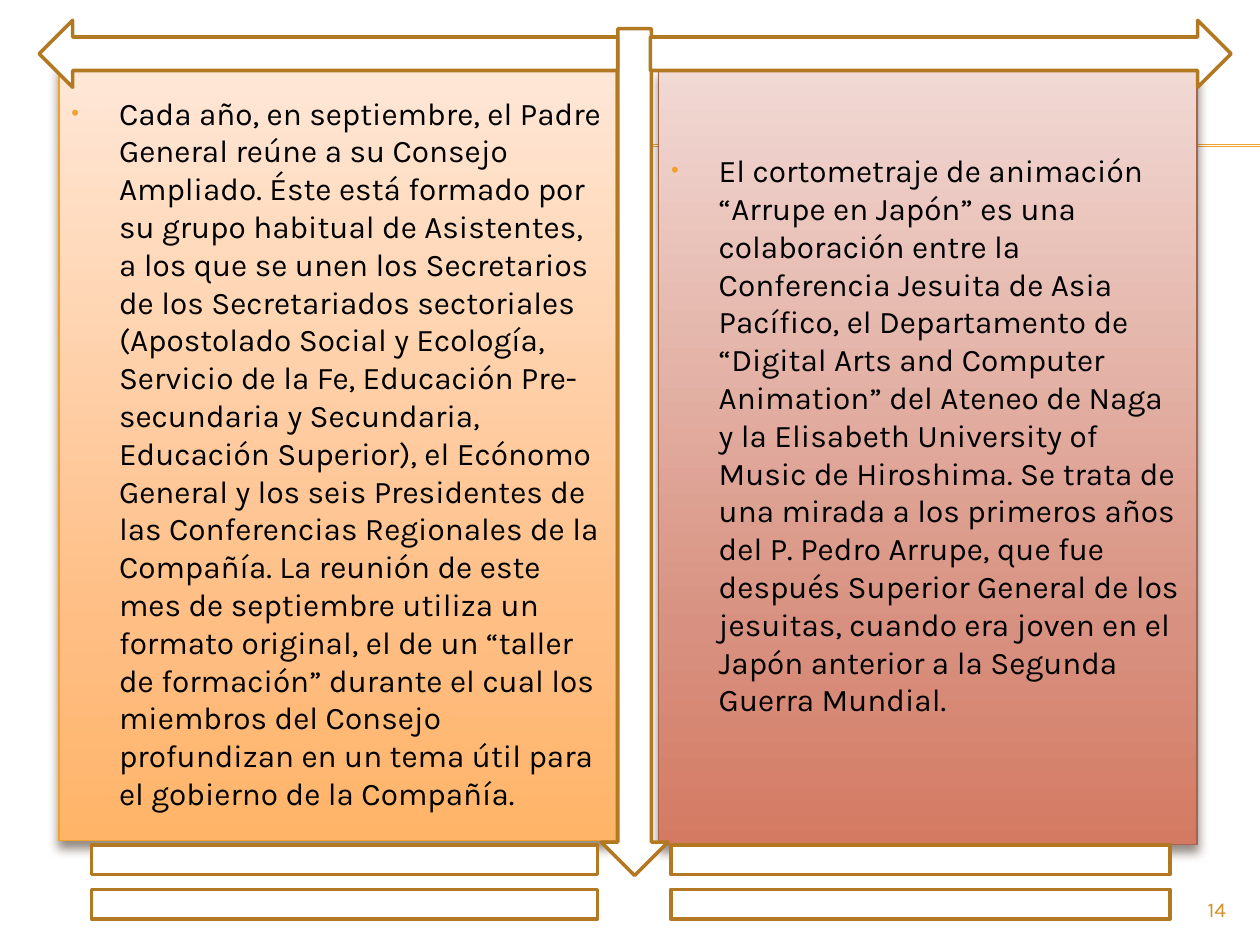
from copy import deepcopy

from lxml.etree import SubElement
from pptx import Presentation
from pptx.dml.color import RGBColor
from pptx.enum.shapes import MSO_CONNECTOR as Connector, MSO_SHAPE as Shape
from pptx.enum.text import MSO_ANCHOR as Anchor, PP_ALIGN as Align
from pptx.oxml.ns import qn
from pptx.util import Cm, Pt

# Content
COUNCIL = (
    "Cada año, en septiembre, el Padre General reúne a su Consejo Ampliado. Éste está "
    "formado por su grupo habitual de Asistentes, a los que se unen los Secretarios de los "
    "Secretariados sectoriales (Apostolado Social y Ecología, Servicio de la Fe, Educación "
    "Pre-secundaria y Secundaria, Educación Superior), el Ecónomo General y los seis "
    "Presidentes de las Conferencias Regionales de la Compañía. La reunión de este mes de "
    "septiembre utiliza un formato original, el de un “taller de formación” durante el cual "
    "los miembros del Consejo profundizan en un tema útil para el gobierno de la Compañía."
)
SHORT_FILM = (
    "El cortometraje de animación “Arrupe en Japón” es una colaboración entre la Conferencia "
    "Jesuita de Asia Pacífico, el Departamento de “Digital Arts and Computer Animation” del "
    "Ateneo de Naga y la Elisabeth University of Music de Hiroshima. Se trata de una mirada a "
    "los primeros años del P. Pedro Arrupe, que fue después Superior General de los jesuitas, "
    "cuando era joven en el Japón anterior a la Segunda Guerra Mundial."
)
PAGE_NUMBER = "14"

# Panels: text, (left, top, width, height) in cm, gradient colours, line, bottom inset
PANELS = [
    (COUNCIL, (1.19, 1.32, 11.23, 15.62), ("FFE7D7", "FFBE84", "FFB468"), "F0A22E", 0.13),
    (SHORT_FILM, (13.28, 1.4, 10.85, 15.62), ("F1D9D4", "D89180", "D47A62"), "A5644E", 1.02),
]
GRADIENT_STOPS = (0, 0.72, 1)

# White frame pieces: shape, (left, top, width, height) in cm
FRAME = [
    (Shape.DOWN_ARROW, (12.12, 0.58, 1.35, 17.07)),
    (Shape.RIGHT_ARROW, (13.11, 0.41, 11.71, 1.35)),
    (Shape.LEFT_ARROW, (0.79, 0.41, 11.66, 1.35)),
    (Shape.MATH_EQUAL, (0, 16.51, 13.89, 2.54)),
    (Shape.MATH_EQUAL, (11.71, 16.51, 13.69, 2.54)),
]
RULE_LEFT, RULE_RIGHT, RULE_TOPS = 1.42, 25.4, (2.92, 2.95)
PAGE_BOX = (22.86, 17.98, 2.11, 0.69)
ACCENT, FRAME_LINE, PAGE_COLOR, SHADOW = "F0A22E", "B27822", "D48F29", "4E3B30"
HANGING = Cm(0.96)


def color(hex_value):
    return RGBColor.from_string(hex_value)


def cm(values):
    return [Cm(value) for value in values]


def set_all(target, formats):
    for name, value in formats.items():
        setattr(target, name, value)


def outline(item, hex_value, points):
    item.line.color.rgb = color(hex_value)
    item.line.width = Pt(points)


def add_tag(parent, tag, **attributes):
    return SubElement(parent, qn(tag), {key: str(value) for key, value in attributes.items()})


def write(paragraph, text, size, hex_value, align):
    paragraph.alignment = align
    run = paragraph.add_run()
    run.text = text
    set_all(run.font, {"name": "Karla", "size": Pt(size)})
    run.font.color.rgb = color(hex_value)


def fill_gradient(panel, hues):
    panel.fill.gradient()
    panel.fill.gradient_angle = 270
    stop_list = panel._element.spPr.find(qn("a:gradFill")).find(qn("a:gsLst"))
    stop_list.append(deepcopy(stop_list[-1]))
    for stop, position, hue in zip(panel.fill.gradient_stops, GRADIENT_STOPS, hues):
        stop.position = position
        stop.color.rgb = color(hue)


def add_shadow(panel):
    panel.shadow.inherit = False
    effects = panel._element.spPr.find(qn("a:effectLst"))
    outer = add_tag(effects, "a:outerShdw", blurRad=Pt(6), dist=Pt(4), dir=5400000, rotWithShape=0)
    add_tag(add_tag(outer, "a:srgbClr", val=SHADOW), "a:alpha", val=60000)


def add_bullet(paragraph):
    properties = paragraph._p.get_or_add_pPr()
    set_all(paragraph, {"space_before": Pt(3.6)})
    properties.set("marL", str(HANGING))
    properties.set("indent", str(-HANGING))
    add_tag(add_tag(properties, "a:buClr"), "a:srgbClr", val=ACCENT)
    add_tag(properties, "a:buSzPct", val=70000)
    add_tag(properties, "a:buFont", typeface="Arial")
    add_tag(properties, "a:buChar", char="•")


def main():
    deck = Presentation()
    set_all(deck, {"slide_width": Cm(25.4), "slide_height": Cm(19.05)})
    slide = deck.slides.add_slide(deck.slide_layouts[6])
    shapes = slide.shapes

    # Double rule behind the panels
    for top in RULE_TOPS:
        rule = shapes.add_connector(Connector.STRAIGHT, *cm((RULE_LEFT, top, RULE_RIGHT, top)))
        outline(rule, ACCENT, 0.75)
        add_tag(rule._element.spPr, "a:effectLst")

    # Text panels
    for text, box, hues, edge, bottom in PANELS:
        panel = shapes.add_shape(Shape.RECTANGLE, *cm(box))
        fill_gradient(panel, hues)
        outline(panel, edge, 0.79)
        add_shadow(panel)
        frame = panel.text_frame
        set_all(frame, {"word_wrap": True, "vertical_anchor": Anchor.MIDDLE,
                        "margin_bottom": Cm(bottom)})
        write(frame.paragraphs[0], text, 18, "000000", Align.LEFT)
        add_bullet(frame.paragraphs[0])

    # Arrows and double bars
    for kind, box in FRAME:
        piece = shapes.add_shape(kind, *cm(box))
        piece.shadow.inherit = False
        piece.fill.solid()
        piece.fill.fore_color.rgb = color("FFFFFF")
        outline(piece, FRAME_LINE, 2)

    # Page number
    page = shapes.add_textbox(*cm(PAGE_BOX)).text_frame
    set_all(page, {"word_wrap": True, "vertical_anchor": Anchor.MIDDLE})
    write(page.paragraphs[0], PAGE_NUMBER, 12, PAGE_COLOR, Align.RIGHT)

    deck.save("out.pptx")


if __name__ == "__main__":
    main()
